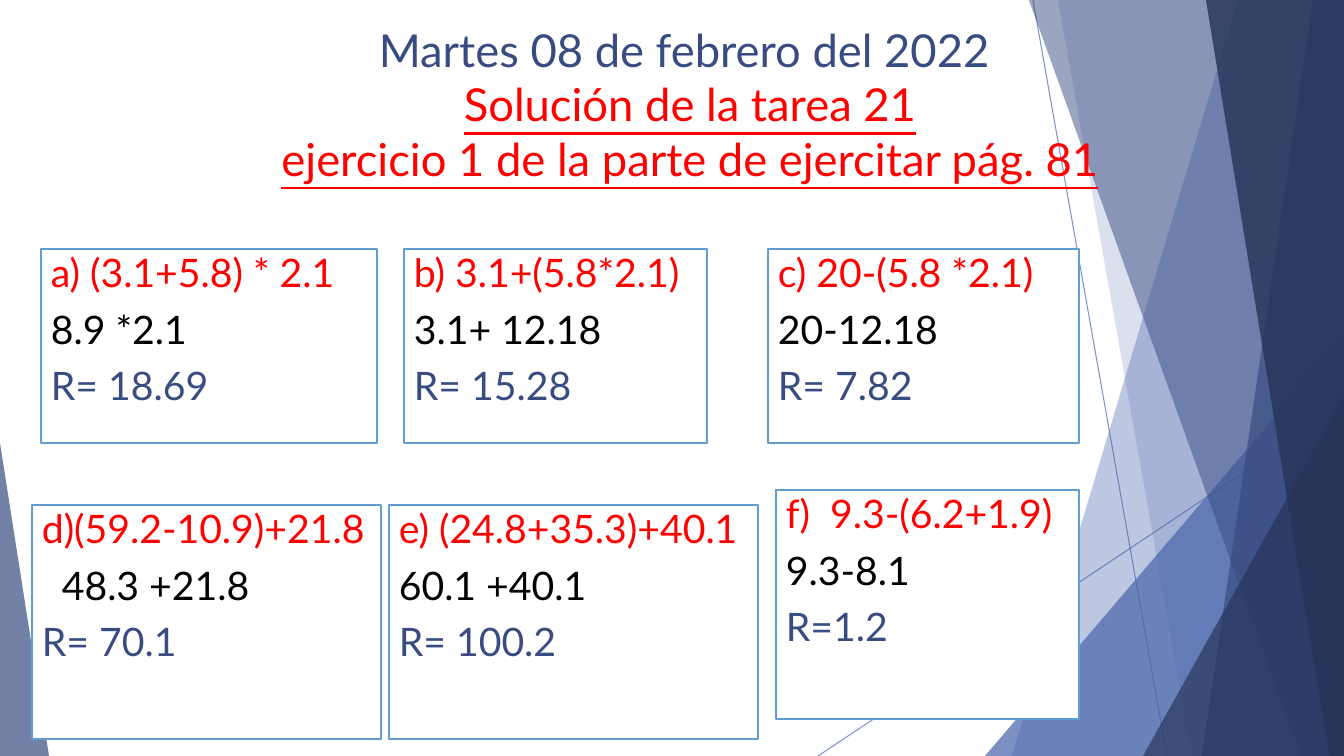
from lxml import etree
from pptx import Presentation, util as u
from pptx.dml.color import RGBColor
from pptx.enum import shapes, text
from pptx.oxml.ns import qn

BLUE = RGBColor(0x4A, 0x66, 0xAC)
NAVY = RGBColor(0x38, 0x4C, 0x81)
DARK = RGBColor(0x25, 0x33, 0x56)
SKY = RGBColor(0x62, 0x9D, 0xD1)
RED = RGBColor(0xFF, 0, 0)
BLACK = RGBColor(0, 0, 0)
WHITE = RGBColor(0xFF, 0xFF, 0xFF)

W, H = 1344, 756
PX = u.Inches(1) / 100.8
FONT = "Lato"

TITLE = [
    ("Martes 08 de febrero del 2022 ", NAVY, False),
    ("Solución de la tarea 21", RED, True),
    ("ejercicio 1 de la parte de ejercitar pág. 81", RED, True),
]
TITLE_BOX = (216, 17, 948, 145)

# box, question, working, indent of the working, result
EXERCISES = [
    ((41, 249, 336, 194), "a) (3.1+5.8) * 2.1", "8.9 *2.1", 0, "R= 18.69"),
    ((404, 249, 303, 194), "b) 3.1+(5.8*2.1)", "3.1+ 12.18", 0, "R= 15.28"),
    ((768, 249, 311, 194), "c) 20-(5.8 *2.1)", "20-12.18", 0, "R= 7.82"),
    ((32, 505, 349, 234), "d)(59.2-10.9)+21.8", "48.3 +21.8", 20, "R= 70.1"),
    ((389, 505, 369, 234), "e) (24.8+35.3)+40.1", "60.1 +40.1", 0, "R= 100.2"),
    ((776, 490, 303, 229), "f)  9.3-(6.2+1.9)", "9.3-8.1", 0, "R=1.2"),
]

LINES = [(1033, 0, 1167, H), (W, 406, 818, H)]

# Bands: (left edge at top, left edge at bottom); triangles: (x, y, w, h, apex)
FACETS = [
    ((1238, 1012), BLUE, 36),
    ((1058, 1192), BLUE, 20),
    ((985, 336, 359, 420, 1), BLUE, 72),
    ((1029, 1301), NAVY, 50),
    ((1313, 1202), NAVY, 70),
    ((1206, 1329), DARK, 80),
    ((1143, 396, 201, 360, 1), DARK, 66),
    ((0, 443, 49, 313, 0), NAVY, 70),
]


def px(*values):
    return [round(v * PX) for v in values]


def set_alpha(fmt, percent):
    """Make the solid colour of a fill or line partly transparent."""
    clr = next(fmt._xPr.iter(qn("a:srgbClr")))
    etree.SubElement(clr, qn("a:alpha"), val=str(percent * 1000))


def add_text(p, words, size, color, underline=None):
    r = p.add_run()
    r.text = words
    r.font.name = FONT
    r.font.size = u.Pt(size)
    r.font.color.rgb = color
    r.font.underline = underline
    r.font.bold = False


def add_line(s, ends):
    line = s.shapes.add_connector(shapes.MSO_CONNECTOR.STRAIGHT, *px(*ends))
    line.line.width = u.Pt(0.75)
    line.line.color.rgb = BLUE
    set_alpha(line.line.fill, 70)
    etree.SubElement(line._element.spPr, qn("a:effectLst"))


def add_facet(s, geometry, color, alpha):
    if len(geometry) == 2:
        top, bottom = geometry
        fb = s.shapes.build_freeform(top, 0, scale=PX)
        fb.add_line_segments([(W, 0), (W, H), (bottom, H)], close=True)
        sp = fb.convert_to_shape()
    else:
        *box, apex = geometry
        sp = s.shapes.add_shape(shapes.MSO_SHAPE.ISOSCELES_TRIANGLE, *px(*box))
        sp.adjustments[0] = apex
    sp.shadow.inherit = False
    sp.line.fill.background()
    sp.fill.solid()
    sp.fill.fore_color.rgb = color
    set_alpha(sp.fill, alpha)


def add_exercise(s, box, question, working, indent, result):
    sp = s.shapes.add_shape(shapes.MSO_SHAPE.RECTANGLE, *px(*box))
    sp.shadow.inherit = False
    sp.fill.solid()
    sp.fill.fore_color.rgb = WHITE
    sp.line.color.rgb = SKY
    sp.line.width = u.Pt(1.5)
    tf = sp.text_frame
    tf.word_wrap = True
    tf.vertical_anchor = text.MSO_ANCHOR.TOP
    rows = [(question, RED, 0), (working, BLACK, indent), (result, NAVY, 0)]
    for i, (words, color, left) in enumerate(rows):
        p = tf.add_paragraph() if i else tf.paragraphs[0]
        p.alignment = text.PP_ALIGN.LEFT
        p.line_spacing = 0.9
        p.space_before = u.Pt(10)
        if left:
            p._p.get_or_add_pPr().set("marL", str(px(left)[0]))
        add_text(p, words, 28, color)


def set_title(s):
    title = s.shapes.title
    title.left, title.top, title.width, title.height = px(*TITLE_BOX)
    tf = title.text_frame
    tf.word_wrap = True
    tf.auto_size = text.MSO_AUTO_SIZE.NONE
    tf.vertical_anchor = text.MSO_ANCHOR.TOP
    p = tf.paragraphs[0]
    p.alignment = text.PP_ALIGN.CENTER
    for i, (words, color, underline) in enumerate(TITLE):
        if i:
            p.add_line_break()
        add_text(p, words, 32.4, color, underline)
    # The title lies in front of the facets
    title._element.getparent().append(title._element)


def main():
    prs = Presentation()
    prs.slide_width, prs.slide_height = px(W, H)
    s = prs.slides.add_slide(prs.slide_layouts[5])
    for ends in LINES:
        add_line(s, ends)
    for facet in FACETS:
        add_facet(s, *facet)
    for exercise in EXERCISES:
        add_exercise(s, *exercise)
    set_title(s)
    prs.save("out.pptx")


if __name__ == "__main__":
    main()
